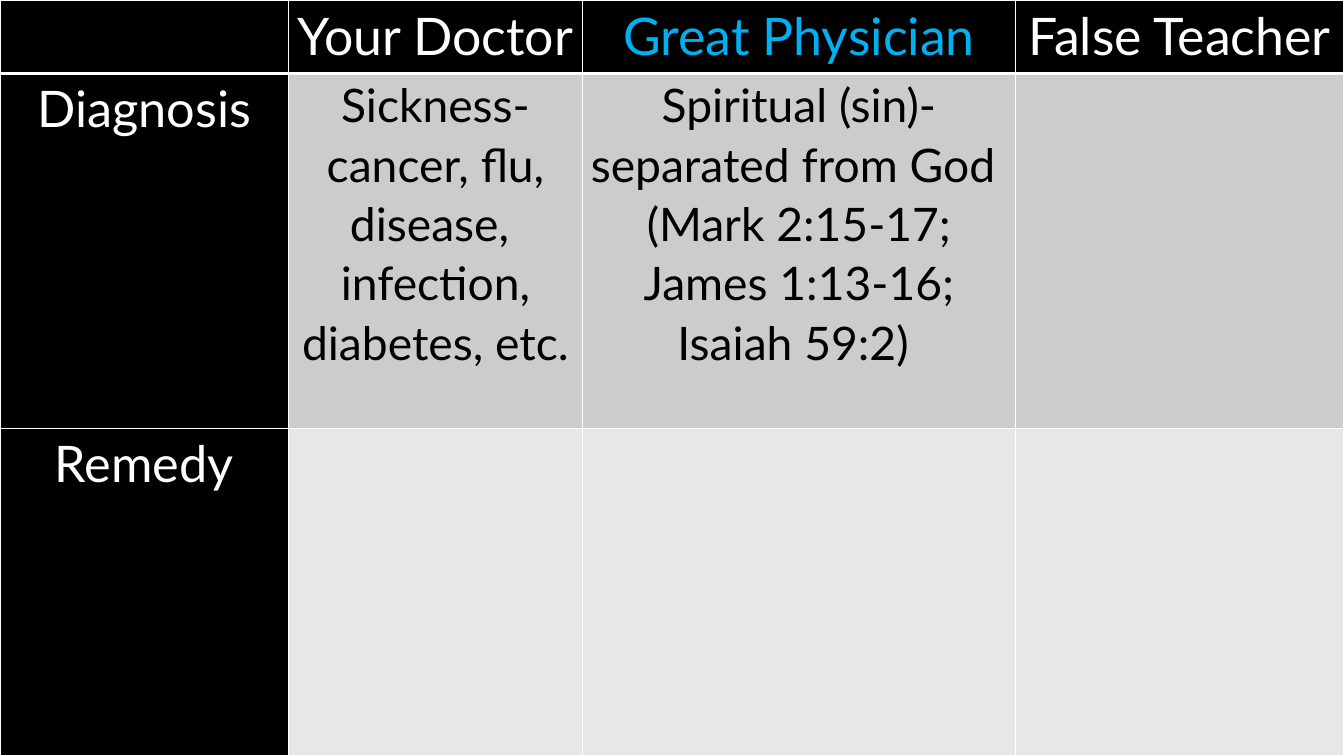
from lxml import etree
from pptx import Presentation
from pptx import util as u
from pptx.dml import color
from pptx.enum import text
from pptx.oxml import ns

HUES = {"black": "000000", "white": "FFFFFF", "blue": "00B0F0",
        "mid": "CCCCCC", "pale": "E7E7E7"}
COLS = [2.86, 2.92, 4.29, 3.26]
ROWS = [0.73, 3.52, 3.25]
CELLS = [
    ["", "Your Doctor", "Great Physician", "False Teacher"],
    ["Diagnosis",
     "Sickness-\ncancer, flu, disease, \ninfection, diabetes, etc.",
     "Spiritual (sin)- separated from God \n"
     "(Mark 2:15-17; James 1:13-16; Isaiah 59:2) ", ""],
    ["Remedy", "", "", ""],
]


def tint(name):
    return color.RGBColor.from_string(HUES[name])


def write(cell, words, size=33, hue="black"):
    cell.margin_left = cell.margin_right = u.Inches(0.07)
    cell.margin_top = cell.margin_bottom = 0
    frame = cell.text_frame
    frame.text = words
    for para in frame.paragraphs:
        para.alignment = text.PP_ALIGN.CENTER
        para.line_spacing = 1.07
        for run in para.runs:
            run.font.name = "Lato"
            run.font.size = u.Pt(size)
            run.font.bold = False
            run.font.color.rgb = tint(hue)


def edge(cell, side, width):
    props = cell._tc.get_or_add_tcPr()
    line = etree.SubElement(props, ns.qn("a:ln" + side), w=str(u.Pt(width)))
    fill = etree.SubElement(line, ns.qn("a:solidFill"))
    etree.SubElement(fill, ns.qn("a:srgbClr"), val=HUES["white"])


def paint(cell, row, col):
    thick = {"T": 3 if row == 1 else 1, "B": 3 if row == 0 else 1}
    for side in "LRTB":
        edge(cell, side, thick.get(side, 1))
    cell.fill.solid()
    dark = row == 0 or col == 0
    cell.fill.fore_color.rgb = tint("black" if dark else ("mid", "pale")[row - 1])


def style(row, col):
    if row == 0:
        return {"size": 37, "hue": "blue" if col == 2 else "white"}
    if col == 0:
        return {"size": 36, "hue": "white"}
    return {}


def chart(slide, left, top, width, height):
    grid = slide.shapes.add_table(
        len(ROWS), len(COLS), u.Inches(left), u.Inches(top),
        u.Inches(width), u.Inches(height)).table
    for col, share in zip(grid.columns, COLS):
        col.width = u.Inches(width * share / sum(COLS))
    for row, share in zip(grid.rows, ROWS):
        row.height = u.Inches(height * share / sum(ROWS))
    for r, line in enumerate(CELLS):
        for c, words in enumerate(line):
            cell = grid.cell(r, c)
            paint(cell, r, c)
            if words:
                write(cell, words, **style(r, c))


def main():
    deck = Presentation()
    deck.slide_width = u.Inches(13.33)
    deck.slide_height = u.Inches(7.5)
    slide = deck.slides.add_slide(deck.slide_layouts[6])
    slide.background.fill.solid()
    slide.background.fill.fore_color.rgb = tint("black")
    chart(slide, 0, 0, 13.33, 7.5)
    deck.save("out.pptx")


if __name__ == "__main__":
    main()
